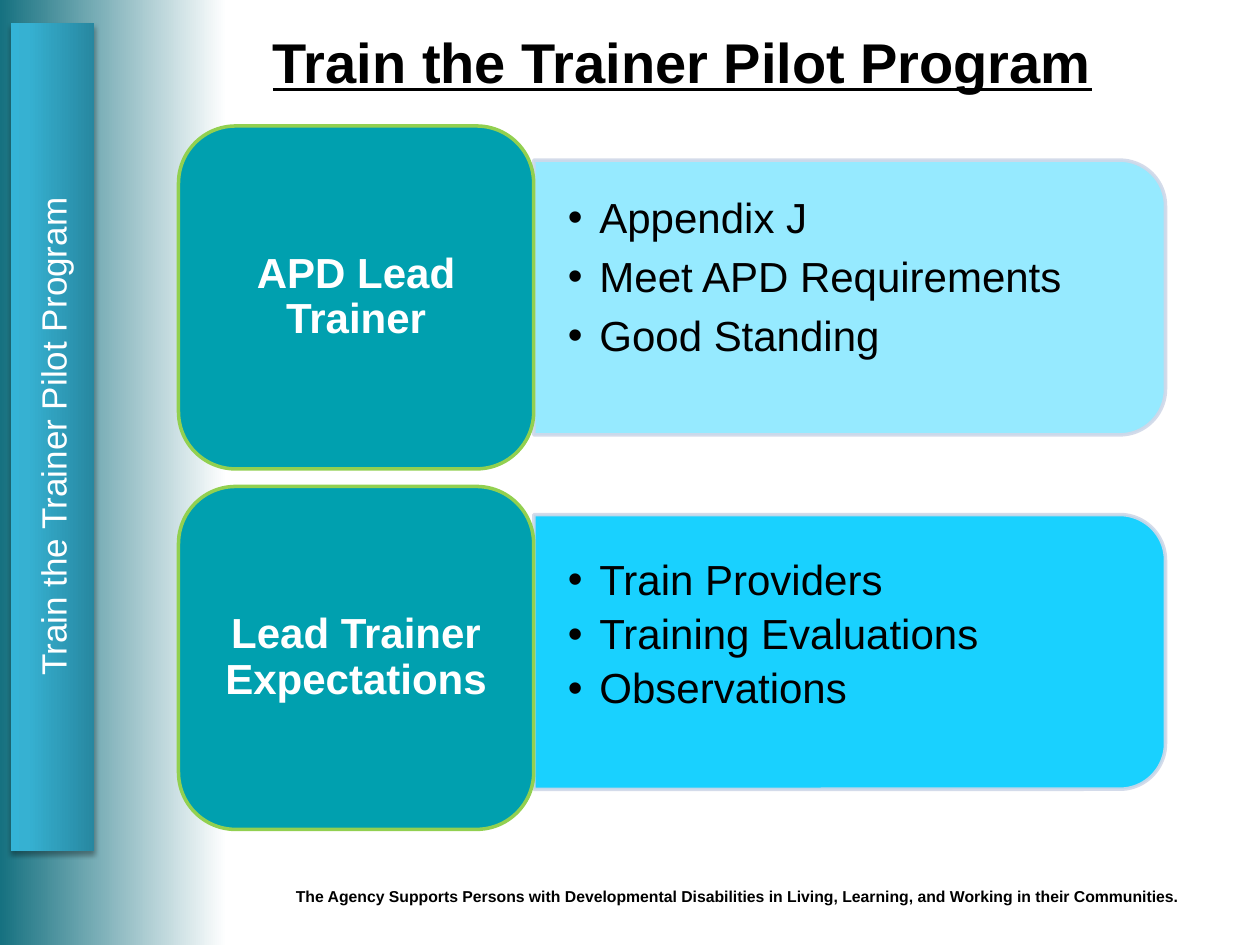
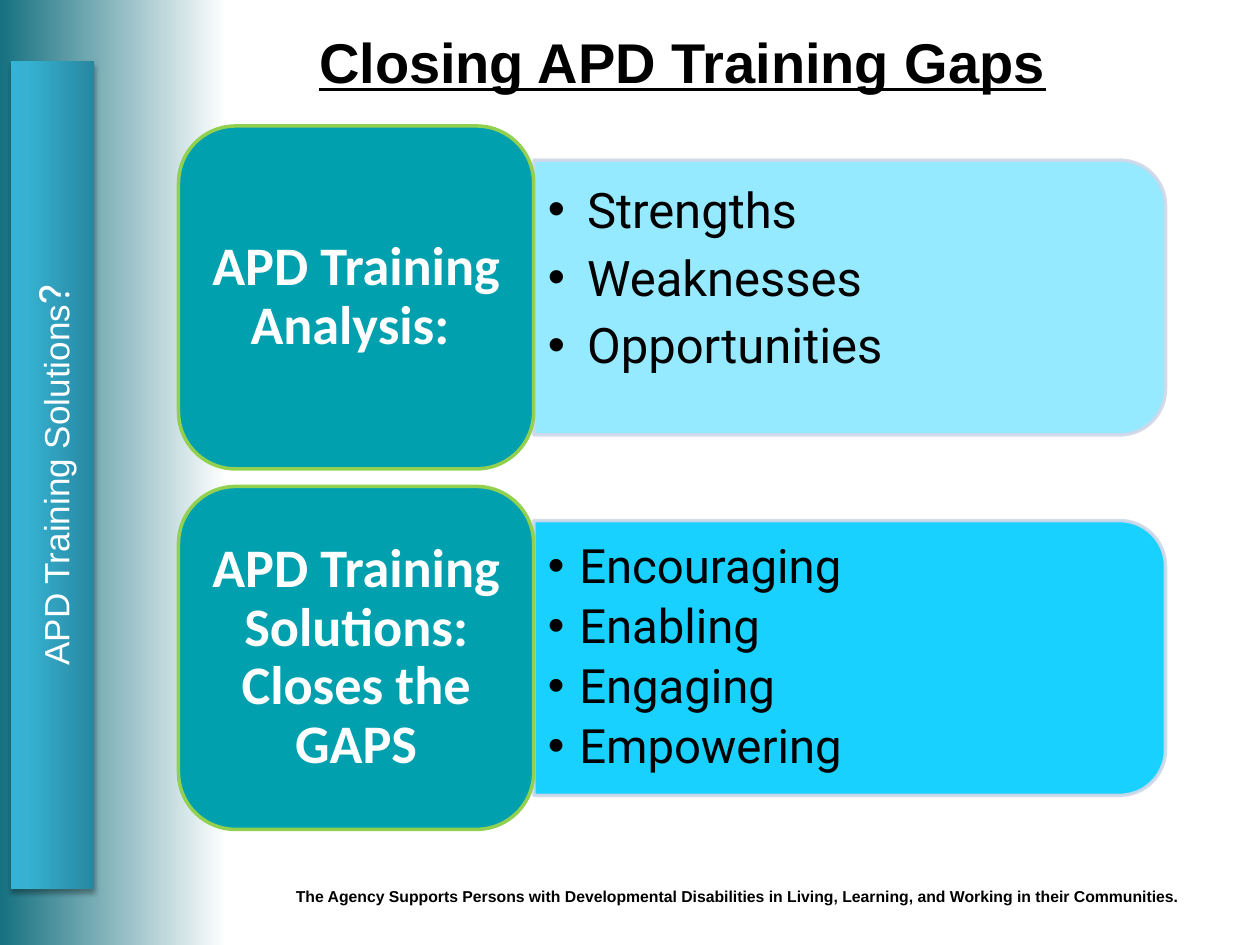
from dataclasses import dataclass

from lxml.etree import SubElement
from pptx import Presentation
from pptx.dml.color import RGBColor
from pptx.enum.shapes import MSO_SHAPE as Preset
from pptx.enum.text import MSO_ANCHOR as Anchor, PP_ALIGN as Align
from pptx.oxml.ns import qn
from pptx.util import Pt

BLACK = RGBColor(0x00, 0x00, 0x00)
WHITE = RGBColor(0xFF, 0xFF, 0xFF)
TEAL = RGBColor(0x00, 0xA0, 0xAF)
GREEN = RGBColor(0x92, 0xD0, 0x50)
SKY = RGBColor(0x00, 0xCC, 0xFF)
PALE_BLUE = RGBColor(0xD0, 0xD8, 0xE8)
DEEP_TEAL = RGBColor(0x16, 0x71, 0x80)
BANNER_DARK = RGBColor(0x27, 0x87, 0xA0)
BANNER_MID = RGBColor(0x36, 0xB1, 0xD2)
BANNER_LIGHT = RGBColor(0x34, 0xB3, 0xD6)

FOOTER = ("The Agency Supports Persons with Developmental Disabilities in Living, "
          "Learning, and Working in their Communities.")
TILE_LEFT, TILE_TOP, TILE_WIDTH, TILE_HEIGHT, TILE_PITCH = 102, 72, 203, 196, 206
PANEL_LENGTH, PANEL_DEPTH = 361, 157
LIST_WIDTH, LIST_HEIGHT = 353.5, 142
PANEL_OPACITIES = (41, 90)


@dataclass(frozen=True)
class Font:
    name: str
    size: float
    color: RGBColor = BLACK
    bold: bool = False
    underline: bool = False


@dataclass(frozen=True)
class Topic:
    label: str
    points: tuple[str, ...]
    font: Font
    indent: float = 18
    line_spacing: float = 0.9
    lift: float = 0  # extra inset below the list, in points
    panel_shift: float = 0


@dataclass(frozen=True)
class Page:
    heading: str
    banner: tuple[tuple[str, Font], ...]
    banner_top: float
    label_font: Font
    label_inset: tuple[float, float]
    list_inset: tuple[float, float]
    topics: tuple[Topic, ...]


HEADING_FONT = Font("Arial", 32, bold=True, underline=True)
FOOTER_FONT = Font("Arial", 9, bold=True)
BANNER_FONT = Font("Arial", 20, WHITE)
ARIAL_LIST = Font("Arial", 24)

PAGES = (
    Page("Train the Trainer Pilot Program",
         (("Train the Trainer Pilot Program", BANNER_FONT),), 225.5,
         Font("Arial", 24, WHITE, bold=True), (7.2, 3.6), (19.5, 10),
         (Topic("APD Lead Trainer",
                ("Appendix J", "Meet APD Requirements", "Good Standing"),
                ARIAL_LIST, line_spacing=1, lift=25),
          Topic("Lead Trainer Expectations",
                ("Train Providers", "Training Evaluations", "Observations"),
                ARIAL_LIST, lift=18, panel_shift=-3.5))),
    Page("Closing APD Training Gaps",
         (("APD Training Solutions", BANNER_FONT), ("?", Font("Roboto", 24, WHITE))), 247.5,
         Font("Calibri", 31, WHITE, bold=True), (9, 4.5), (8, 4.5),
         (Topic("APD Training Analysis: ",
                ("Strengths", "Weaknesses", "Opportunities"),
                Font("Roboto", 28), indent=22.5, line_spacing=1, lift=24),
          Topic("APD Training Solutions: Closes the GAPS",
                ("Encouraging", "Enabling", "Engaging", "Empowering"),
                Font("Roboto", 27)))),
)


def box(left: float, top: float, width: float, height: float) -> tuple:
    return Pt(left), Pt(top), Pt(width), Pt(height)


def add_run(paragraph, text: str, font: Font) -> None:
    run = paragraph.add_run()
    run.text = text
    run.font.name = font.name
    run.font.size = Pt(font.size)
    run.font.bold = font.bold
    run.font.underline = font.underline
    run.font.color.rgb = font.color


def prepare_frame(shape, inset=(7.2, 3.6), anchor=Anchor.MIDDLE):
    frame = shape.text_frame
    frame.word_wrap = True
    frame.vertical_anchor = anchor
    frame.margin_left = frame.margin_right = Pt(inset[0])
    frame.margin_top = frame.margin_bottom = Pt(inset[1])
    return frame


def add_line_of_text(slide, bounds: tuple, text: str, font: Font, align) -> None:
    frame = prepare_frame(slide.shapes.add_textbox(*bounds), anchor=Anchor.TOP)
    frame.paragraphs[0].alignment = align
    add_run(frame.paragraphs[0], text, font)


def set_opacity(fill_parent, percent: int) -> None:
    color = next(fill_parent.iter(qn("a:srgbClr")))
    SubElement(color, qn("a:alpha"), val=str(percent * 1000))


def set_gradient(fill, holder, stops: tuple, angle: int) -> None:
    """Fill with (percent, colour) stops; the angle runs clockwise in degrees."""
    fill.gradient()
    gradient = holder.find(".//" + qn("a:gradFill"))
    gradient.set("rotWithShape", "1")
    for child in list(gradient):
        gradient.remove(child)
    stop_list = SubElement(gradient, qn("a:gsLst"))
    for percent, color in stops:
        stop = SubElement(stop_list, qn("a:gs"), pos=str(percent * 1000))
        SubElement(stop, qn("a:srgbClr"), val=str(color))
    SubElement(gradient, qn("a:lin"), ang=str(angle * 60000), scaled="0")


def add_outlined(slide, preset, bounds: tuple, fill: RGBColor, line: RGBColor):
    shape = slide.shapes.add_shape(preset, *bounds)
    shape.shadow.inherit = False
    shape.fill.solid()
    shape.fill.fore_color.rgb = fill
    shape.line.color.rgb = line
    shape.line.width = Pt(2)
    return shape


def add_panel(slide, middle: float, opacity: int) -> None:
    center = TILE_LEFT + TILE_WIDTH + PANEL_LENGTH / 2
    bounds = box(center - PANEL_DEPTH / 2, middle - PANEL_LENGTH / 2,
                 PANEL_DEPTH, PANEL_LENGTH)
    panel = add_outlined(slide, Preset.ROUND_2_SAME_RECTANGLE, bounds, SKY, PALE_BLUE)
    panel.rotation = 90
    properties = panel._element.spPr
    set_opacity(properties.find(qn("a:solidFill")), opacity)
    set_opacity(properties.find(qn("a:ln")), 90)


def add_points(slide, topic: Topic, middle: float, inset: tuple[float, float]) -> None:
    bounds = box(TILE_LEFT + TILE_WIDTH, middle - LIST_HEIGHT / 2, LIST_WIDTH, LIST_HEIGHT)
    frame = prepare_frame(slide.shapes.add_textbox(*bounds), inset)
    frame.margin_bottom = Pt(inset[1] + topic.lift)
    for index, point in enumerate(topic.points):
        paragraph = frame.add_paragraph() if index else frame.paragraphs[0]
        properties = paragraph._p.get_or_add_pPr()
        properties.set("marL", str(Pt(topic.indent)))
        properties.set("indent", str(-Pt(topic.indent)))
        SubElement(properties, qn("a:buFont"), typeface="Arial")
        SubElement(properties, qn("a:buChar"), char="•")
        paragraph.line_spacing = topic.line_spacing
        paragraph.space_after = Pt(5)
        add_run(paragraph, point, topic.font)


def add_tile(slide, label: str, top: float, font: Font, inset: tuple[float, float]) -> None:
    tile = add_outlined(slide, Preset.ROUNDED_RECTANGLE,
                        box(TILE_LEFT, top, TILE_WIDTH, TILE_HEIGHT), TEAL, GREEN)
    paragraph = prepare_frame(tile, inset).paragraphs[0]
    paragraph.alignment = Align.CENTER
    paragraph.line_spacing = 0.9
    add_run(paragraph, label, font)


def add_banner(slide, page: Page) -> None:
    banner = slide.shapes.add_shape(Preset.RECTANGLE,
                                    *box(-206.5, page.banner_top, 473, 48))
    banner.rotation = 270
    banner.line.fill.background()
    properties = banner._element.spPr
    set_gradient(banner.fill, properties,
                 ((0, BANNER_DARK), (80, BANNER_MID), (100, BANNER_LIGHT)), 270)
    banner.shadow.inherit = False
    shadow = SubElement(properties.find(qn("a:effectLst")), qn("a:outerShdw"),
                        blurRad=str(Pt(3)), dist=str(Pt(2)), dir="5400000",
                        rotWithShape="0")
    SubElement(shadow, qn("a:srgbClr"), val=str(BLACK))
    set_opacity(shadow, 35)
    paragraph = prepare_frame(banner).paragraphs[0]
    paragraph.alignment = Align.CENTER
    for text, font in page.banner:
        add_run(paragraph, text, font)


def add_page(deck, page: Page) -> None:
    slide = deck.slides.add_slide(deck.slide_layouts[6])
    add_line_of_text(slide, box(162, 503, 522, 18), FOOTER, FOOTER_FONT, Align.LEFT)
    for row, (topic, opacity) in enumerate(zip(page.topics, PANEL_OPACITIES)):
        top = TILE_TOP + row * TILE_PITCH
        middle = top + TILE_HEIGHT / 2 + topic.panel_shift
        add_panel(slide, middle, opacity)
        add_points(slide, topic, middle, page.list_inset)
        add_tile(slide, topic.label, top, page.label_font, page.label_inset)
    add_banner(slide, page)
    add_line_of_text(slide, box(90, 12, 600, 46), page.heading, HEADING_FONT, Align.CENTER)


def main() -> None:
    deck = Presentation()
    deck.slide_width, deck.slide_height = Pt(720), Pt(540)
    master = deck.slide_master
    set_gradient(master.background.fill, master._element,
                 ((0, DEEP_TEAL), (18, WHITE), (100, WHITE)), 0)
    for page in PAGES:
        add_page(deck, page)
    deck.save("out.pptx")


if __name__ == "__main__":
    main()
